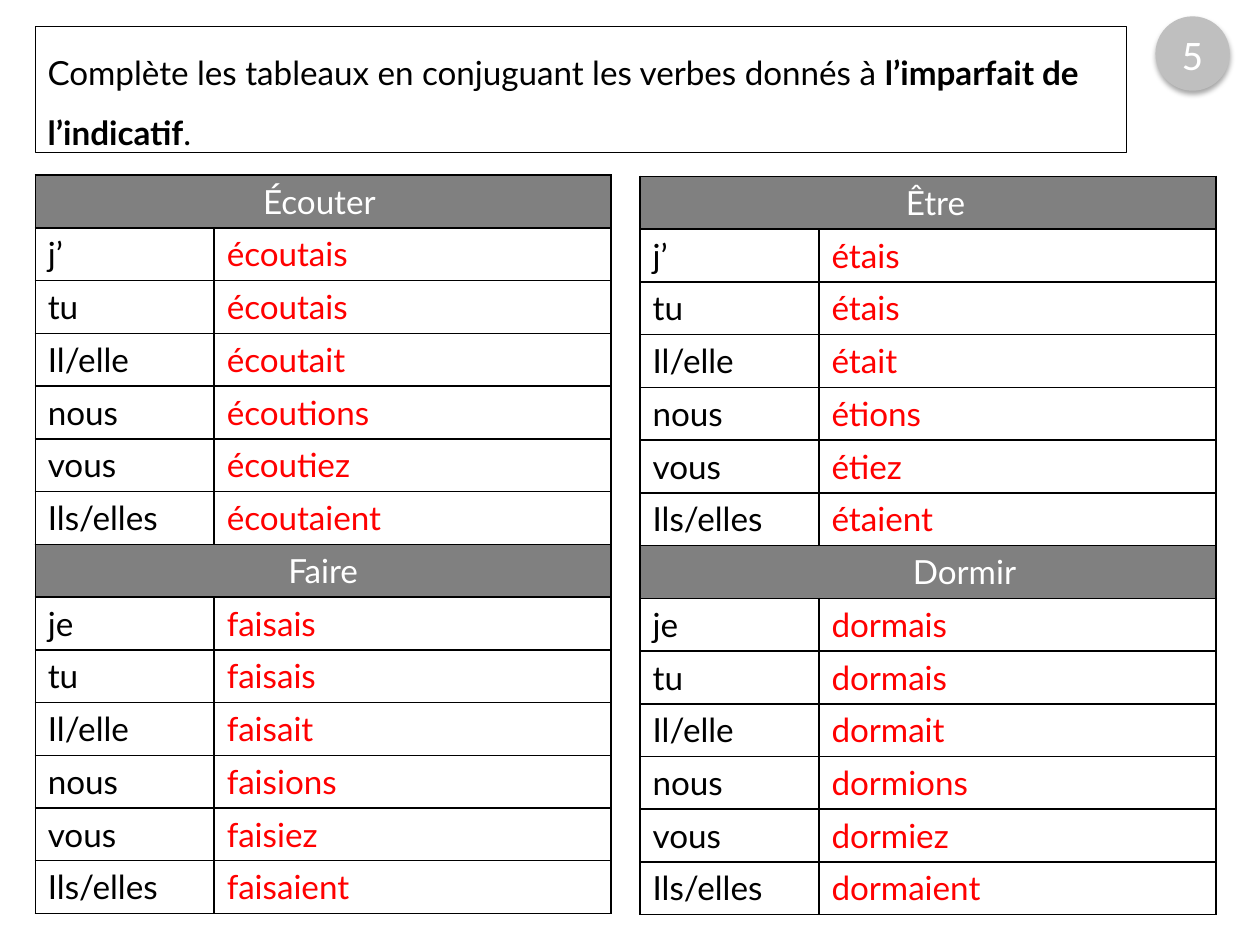
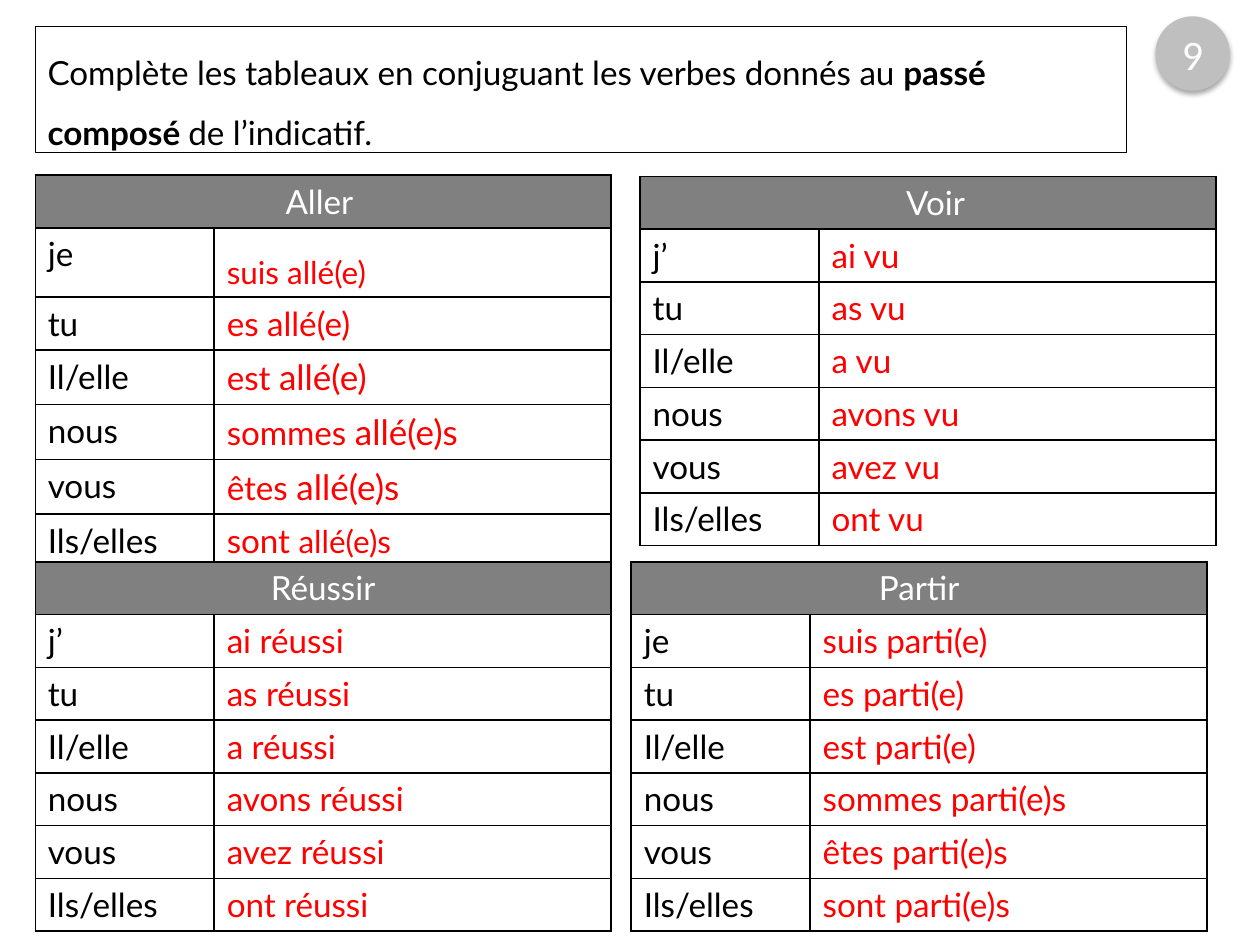
from dataclasses import dataclass
from typing import NamedTuple

from lxml import etree
from pptx import Presentation
from pptx.dml.color import RGBColor
from pptx.enum import shapes, text
from pptx.oxml import ns
from pptx.util import Emu, Pt

COLORS = {"ink": "000000", "answer": "FF0000", "paper": "FFFFFF",
          "header": "808080", "badge": "BFBFBF"}
BODY_FONT, BADGE_FONT = "Lato", "Calibri"
BODY_SIZE = 19
OTHER_PRONOUNS = ["tu", "Il/elle", "nous", "vous", "Ils/elles"]

# Grid: 100 columns by 75 rows
prs = Presentation()
prs.slide_width, prs.slide_height = Emu(9144000), Emu(6858000)
COL, ROW = prs.slide_width / 100, prs.slide_height / 75
LEFT, RIGHT = 2.8, 50.8
TOP_LEFT, TOP_RIGHT = 13.9, 14
TABLE_COLS, TABLE_ROWS = (14.2, 31.5), 29.3
CELL_MARGIN = 1


class Run(NamedTuple):
    text: str
    size: float = BODY_SIZE
    bold: bool = False


@dataclass
class Verb:
    name: str
    first: str
    answers: list[list[Run]]
    left: float
    top: float
    nudge: float = 0  # header shift in columns
    first_spacing: float = 1


@dataclass
class Card:
    number: str
    task: list[Run]
    verbs: list[Verb]


def cols(n: float) -> Emu:
    return Emu(round(n * COL))


def rows(n: float) -> Emu:
    return Emu(round(n * ROW))


def rgb(key: str) -> RGBColor:
    return RGBColor.from_string(COLORS[key])


def plain(*answers: str) -> list[list[Run]]:
    return [[Run(a)] for a in answers]


def sub(parent, tag: str, **attrs):
    return etree.SubElement(parent, ns.qn(tag), {k: str(v) for k, v in attrs.items()})


def write(tf, runs: list[Run], color: str, font: str = BODY_FONT, **paragraph) -> None:
    p = tf.paragraphs[0]
    for name, value in paragraph.items():
        setattr(p, name, value)
    for run in runs:
        r = p.add_run()
        r.text = run.text
        r.font.color.rgb = rgb(color)
        for name, value in {"name": font, "size": Pt(run.size), "bold": run.bold}.items():
            setattr(r.font, name, value)


def style_cell(cell, fill: str) -> None:
    tc_pr = cell._tc.get_or_add_tcPr()
    for side in "LRTB":
        ln = sub(tc_pr, f"a:ln{side}", w=Pt(1))
        sub(sub(ln, "a:solidFill"), "a:srgbClr", val=COLORS["ink"])
    cell.fill.solid()
    cell.fill.fore_color.rgb = rgb(fill)


def add_task(s, runs: list[Run]) -> None:
    sp = s.shapes.add_shape(shapes.MSO_SHAPE.RECTANGLE,
                            cols(LEFT), rows(2.1), cols(86.6), rows(10))
    sp.shadow.inherit = False
    sp.fill.background()
    sp.line.color.rgb = rgb("ink")
    sp.line.width = Pt(0.25)
    tf = sp.text_frame
    for name, value in {"word_wrap": True, "vertical_anchor": text.MSO_ANCHOR.TOP,
                        "auto_size": text.MSO_AUTO_SIZE.SHAPE_TO_FIT_TEXT}.items():
        setattr(tf, name, value)
    write(tf, runs, "ink", alignment=text.PP_ALIGN.LEFT, line_spacing=1.5)


def add_badge(s, number: str) -> None:
    sp = s.shapes.add_shape(shapes.MSO_SHAPE.OVAL,
                            cols(91.7), rows(1.3), cols(5.9), rows(5.9))
    sp.shadow.inherit = False
    sp.fill.solid()
    sp.fill.fore_color.rgb = rgb("badge")
    sp.line.fill.background()
    effects = sp._element.spPr.find(ns.qn("a:effectLst"))
    shadow = sub(effects, "a:outerShdw", blurRad=Pt(3.1), dist=Pt(1.8),
                 dir=90 * 60000, rotWithShape=0)
    sub(sub(shadow, "a:srgbClr", val=COLORS["ink"]), "a:alpha", val=35000)
    sp.text_frame.vertical_anchor = text.MSO_ANCHOR.MIDDLE
    write(sp.text_frame, [Run(number, 24)], "paper", BADGE_FONT,
          alignment=text.PP_ALIGN.CENTER)


def add_verb(s, verb: Verb) -> None:
    pronouns = [verb.first, *OTHER_PRONOUNS]
    count = len(pronouns) + 1
    table = s.shapes.add_table(count, 2, cols(verb.left), rows(verb.top),
                               cols(sum(TABLE_COLS)), rows(TABLE_ROWS)).table
    for column, width in zip(table.columns, TABLE_COLS):
        column.width = cols(width)
    for row in table.rows:
        row.height = rows(TABLE_ROWS / count)
    for i in range(count):
        for j in range(2):
            style_cell(table.cell(i, j), "paper" if i else "header")

    # Header with the infinitive
    header = table.cell(0, 0)
    header.merge(table.cell(0, 1))
    header.margin_left = cols(CELL_MARGIN + max(verb.nudge, 0))
    header.margin_right = cols(CELL_MARGIN + max(-verb.nudge, 0))
    write(header.text_frame, [Run(verb.name)], "paper", alignment=text.PP_ALIGN.CENTER)

    # Pronouns and conjugated forms
    for i, (pronoun, answer) in enumerate(zip(pronouns, verb.answers), 1):
        write(table.cell(i, 0).text_frame, [Run(pronoun)], "ink")
        spacing = {"line_spacing": verb.first_spacing} if i == 1 else {}
        write(table.cell(i, 1).text_frame, answer, "answer", **spacing)


CARDS = [
    Card("5", [Run("Complète les tableaux en conjuguant les verbes donnés à "),
               Run("l’imparfait de l’indicatif", bold=True), Run(".")], [
        Verb("Écouter", "j’", plain("écoutais", "écoutais", "écoutait", "écoutions",
                                    "écoutiez", "écoutaient"), LEFT, TOP_LEFT, -0.6),
        Verb("Faire", "je", plain("faisais", "faisais", "faisait", "faisions",
                                  "faisiez", "faisaient"), LEFT, TOP_LEFT + TABLE_ROWS),
        Verb("Être", "j’", plain("étais", "étais", "était", "étions",
                                 "étiez", "étaient"), RIGHT, TOP_RIGHT, 1.2),
        Verb("Dormir", "je", plain("dormais", "dormais", "dormait", "dormions",
                                   "dormiez", "dormaient"),
             RIGHT, TOP_RIGHT + TABLE_ROWS, 5.8),
    ]),
    Card("9", [Run("Complète les tableaux en conjuguant les verbes donnés au "),
               Run("passé composé ", bold=True), Run("de l’indicatif.")], [
        Verb("Aller", "je", [[Run("suis allé(e)", 18)], [Run("es allé(e)")],
                             [Run("est "), Run("allé(e)", 20)],
                             [Run("sommes "), Run("allé(e)s", 20)],
                             [Run("êtes "), Run("allé(e)s", 20)],
                             [Run("sont "), Run("allé(e)s", 18)]],
             LEFT, TOP_LEFT, -0.6, 1.5),
        Verb("Réussir", "j’", plain("ai réussi", "as réussi", "a réussi", "avons réussi",
                                    "avez réussi", "ont réussi"), LEFT, 44.6),
        Verb("Voir", "j’", plain("ai vu", "as vu", "a vu", "avons vu",
                                 "avez vu", "ont vu"), RIGHT, TOP_RIGHT, 1.2),
        Verb("Partir", "je", plain("suis parti(e)", "es parti(e)", "est parti(e)",
                                   "sommes parti(e)s", "êtes parti(e)s",
                                   "sont parti(e)s"), 50.1, 44.6),
    ]),
]


def main() -> None:
    for card in CARDS:
        s = prs.slides.add_slide(prs.slide_layouts[6])
        add_task(s, card.task)
        add_badge(s, card.number)
        for verb in card.verbs:
            add_verb(s, verb)
    prs.save("out.pptx")


if __name__ == "__main__":
    main()
